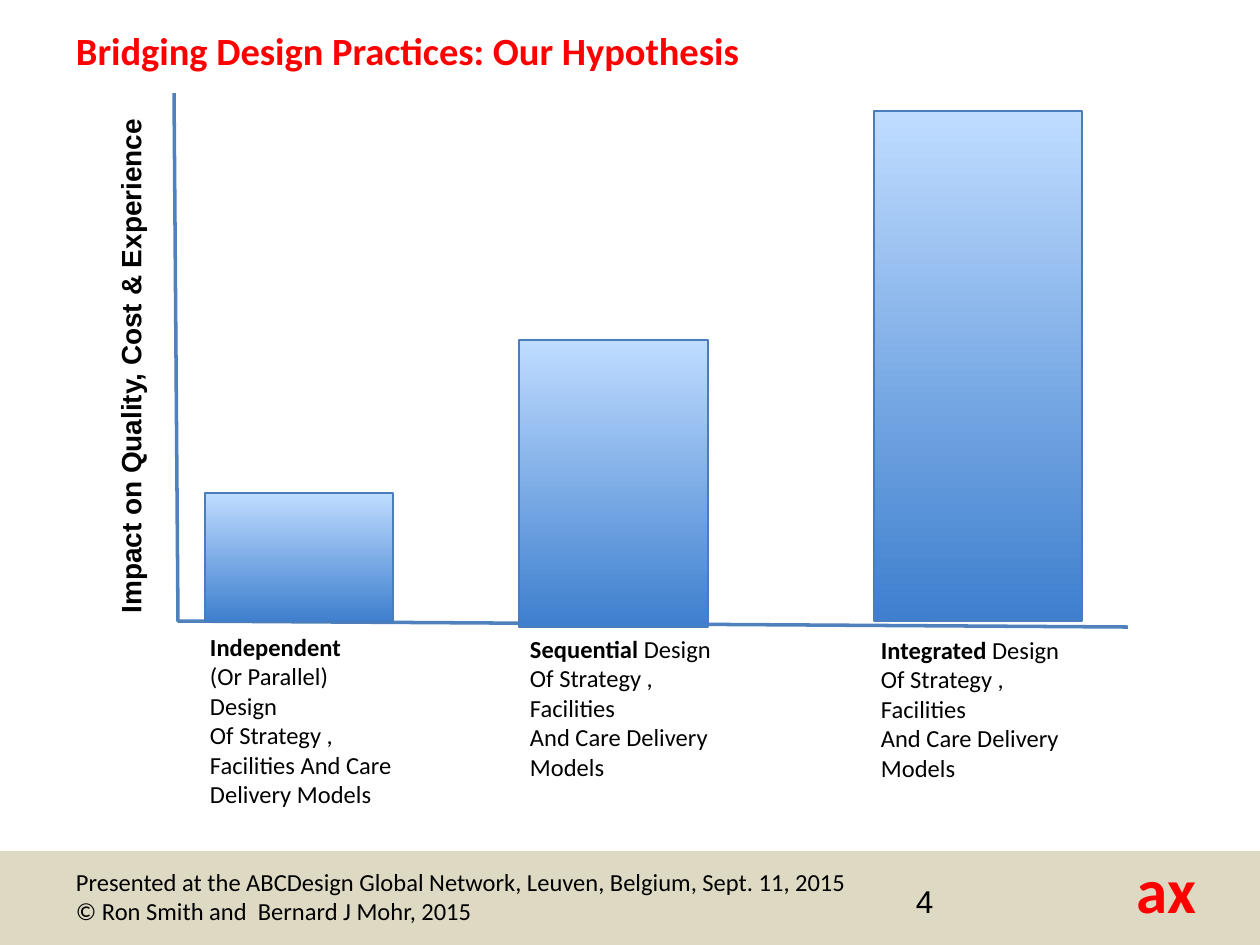
from pptx import Presentation
from pptx.dml.color import RGBColor
from pptx.enum.shapes import MSO_SHAPE
from pptx.enum.text import MSO_ANCHOR, MSO_AUTO_SIZE, PP_ALIGN
from pptx.util import Pt

RECTANGLE = MSO_SHAPE.RECTANGLE
TOP, LEFT, NO_FIT = MSO_ANCHOR.TOP, PP_ALIGN.LEFT, MSO_AUTO_SIZE.NONE
PX = 914400 // 126
TITLE_ONLY = 5
BLACK, RED = "000000", "FF0000"
AXIS_BLUE, BAR_EDGE = "4F81BD", "4A7DBB"
BAR_BOTTOM, BAR_TOP = "3E7FCE", "BFDCFF"
BAND = "DDD9C3"

# Each paragraph is a list of (text, bold) runs; boxes are left, top, width, height in px.
TITLE = [[("Bridging Design Practices: Our Hypothesis", True)]]
AXIS_TITLE = [[("Impact on Quality, Cost & Experience", True)]]
FOOTER = [
    [("Presented at the ABCDesign Global Network, Leuven, Belgium, Sept. 11, 2015", False)],
    [("© Ron Smith and  Bernard J Mohr, 2015", False)],
]
SHARED_LINES = ["Of Strategy ,", "Facilities", "And Care Delivery Models"]
BARS = [
    {"bar": (205, 493, 188, 129), "label": (197, 626, 219, 220),
     "name": "Independent", "after": "",
     "lines": ["(Or Parallel)", "Design", "Of Strategy ,",
               "Facilities And Care Delivery Models"]},
    {"bar": (519, 340, 189, 287), "label": (517, 628, 219, 190),
     "name": "Sequential ", "after": "Design", "lines": SHARED_LINES},
    {"bar": (874, 111, 208, 510), "label": (868, 629, 219, 190),
     "name": "Integrated ", "after": "Design", "lines": SHARED_LINES},
]
AXES = [(174, 93), (178, 621), (1128, 627)]


def color(hex_value):
    return RGBColor.from_string(hex_value)


def place(shape, box):
    for side, length in zip(("left", "top", "width", "height"), box):
        setattr(shape, side, length * PX)


def write(shape, paragraphs, size, hex_value=BLACK, font="Calibri", **margins):
    frame = shape.text_frame
    settings = {"word_wrap": True, "auto_size": NO_FIT, "vertical_anchor": TOP,
                "margin_left": 13, "margin_right": 13,
                "margin_top": 6, "margin_bottom": 6, **margins}
    for name, value in settings.items():
        setattr(frame, name, value * PX if name.startswith("margin") else value)
    for index, runs in enumerate(paragraphs):
        para = frame.add_paragraph() if index else frame.paragraphs[0]
        para.alignment = LEFT
        for text, bold in runs:
            span = para.add_run()
            span.text = text
            span.font.color.rgb = color(hex_value)
            for name, value in {"name": font, "size": Pt(size), "bold": bold}.items():
                setattr(span.font, name, value)


def add_text(slide, box, paragraphs, size, **formats):
    shape = slide.shapes.add_textbox(*(length * PX for length in box))
    write(shape, paragraphs, size, **formats)
    return shape


def add_rectangle(slide, box):
    shape = slide.shapes.add_shape(RECTANGLE, *(length * PX for length in box))
    shape.shadow.inherit = False
    return shape


def add_footer(slide):
    band = add_rectangle(slide, (0, 851, 1260, 94))
    band.fill.solid()
    band.fill.fore_color.rgb = color(BAND)
    band.line.fill.background()
    add_text(slide, (1124, 845, 105, 89), [[("ax", True)]], 36, hex_value=RED)
    add_text(slide, (63, 861, 1008, 73), FOOTER, 14, margin_right=0)
    add_text(slide, (903, 876, 294, 50), [[("4", False)]], 18, font="Arial")


def add_axes(slide):
    builder = slide.shapes.build_freeform(*AXES[0], scale=PX)
    builder.add_line_segments(AXES[1:], close=False)
    axes = builder.convert_to_shape()
    axes.shadow.inherit = False
    axes.fill.background()
    axes.line.color.rgb = color(AXIS_BLUE)
    axes.line.width = Pt(2)
    axis_title = add_text(slide, (-126, 326, 527, 74), AXIS_TITLE, 16, font="Arial",
                          margin_top=13, margin_bottom=13)
    axis_title.rotation = 270


def add_bar(slide, entry):
    bar = add_rectangle(slide, entry["bar"])
    bar.fill.gradient()
    bar.fill.gradient_angle = 90
    for stop, hex_value in zip(bar.fill.gradient_stops, (BAR_BOTTOM, BAR_TOP)):
        stop.color.rgb = color(hex_value)
    bar.line.color.rgb = color(BAR_EDGE)
    bar.line.width = Pt(0.75)

    heading = [(entry["name"], True)]
    if entry["after"]:
        heading.append((entry["after"], False))
    lines = [[(line, False)] for line in entry["lines"]]
    add_text(slide, entry["label"], [heading] + lines, 14)


def main():
    deck = Presentation()
    deck.slide_width, deck.slide_height = 1260 * PX, 945 * PX
    slide = deck.slides.add_slide(deck.slide_layouts[TITLE_ONLY])
    add_footer(slide)
    place(slide.shapes.title, (63, 21, 1071, 87))
    write(slide.shapes.title, TITLE, 22, hex_value=RED)
    add_axes(slide)
    for entry in BARS:
        add_bar(slide, entry)
    deck.save("out.pptx")


if __name__ == "__main__":
    main()
